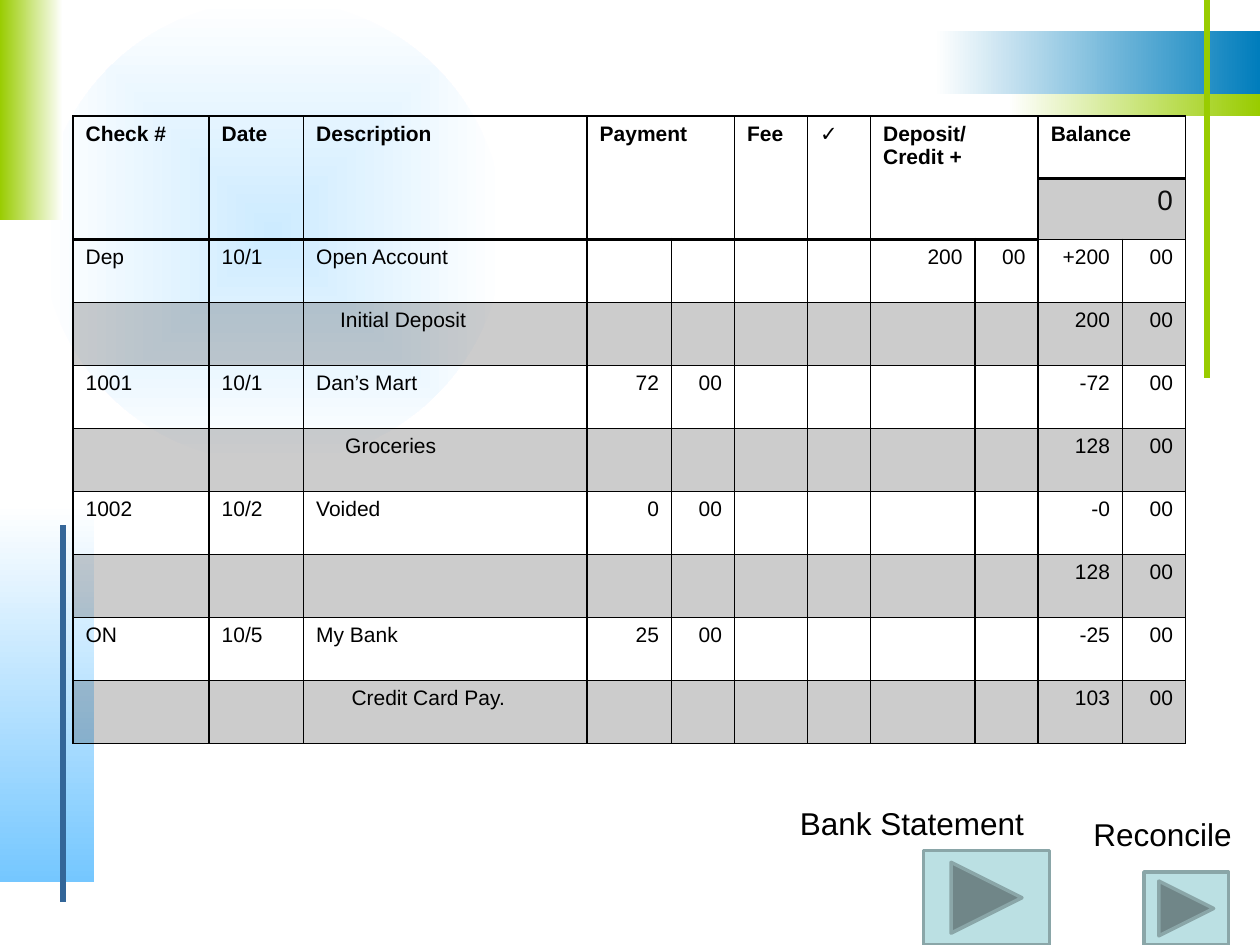
from typing import NamedTuple

from lxml.etree import SubElement
from pptx import Presentation
from pptx.dml.color import RGBColor
from pptx.enum.shapes import MSO_CONNECTOR, MSO_SHAPE
from pptx.enum.text import MSO_AUTO_SIZE, PP_ALIGN
from pptx.oxml import parse_xml
from pptx.oxml.ns import nsdecls, qn
from pptx.util import Inches, Pt

BLACK = RGBColor(0x00, 0x00, 0x00)
WHITE = RGBColor(0xFF, 0xFF, 0xFF)
NEAR_BLACK = RGBColor(0x0D, 0x0D, 0x0D)
GREEN = RGBColor(0x99, 0xCC, 0x00)
PALE_BLUE = RGBColor(0xCD, 0xEB, 0xFF)
SKY_BLUE = RGBColor(0x75, 0xC7, 0xFF)
DEEP_BLUE = RGBColor(0x00, 0x7D, 0xBC)
STEEL_BLUE = RGBColor(0x33, 0x66, 0x99)
BUTTON_FILL = RGBColor(0xBB, 0xE0, 0xE3)
BUTTON_LINE = RGBColor(0x8A, 0xA6, 0xA8)
FONT = "Arial"


class Box(NamedTuple):
    left: float
    top: float
    width: float
    height: float


class GradientBand(NamedTuple):
    box: Box
    start: RGBColor
    end: RGBColor
    angle: float = 0  # counter-clockwise


class Rule(NamedTuple):
    x: float
    top: float
    bottom: float
    color: RGBColor


class Button(NamedTuple):
    label: str
    label_box: Box
    box: Box


class Heading(NamedTuple):
    text: str
    column: int
    columns: int = 1
    rows: int = 2


class Entry(NamedTuple):
    """One transaction: a plain row and the shaded row below it."""
    check: str
    date: str
    description: str
    detail: str
    indent: float
    payment: str
    deposit: str
    change: str
    balance: str


BANDS = [
    GradientBand(Box(7.42, 0.25, 2.58, 0.5), WHITE, DEEP_BLUE),
    GradientBand(Box(0, 4, 0.75, 3), WHITE, SKY_BLUE, 270),
    GradientBand(Box(0, 0, 0.5, 1.75), GREEN, WHITE),
    GradientBand(Box(8, 0.75, 2, 0.17), WHITE, GREEN),
]
RULES = [Rule(9.58, 0, 3, GREEN), Rule(0.5, 4.17, 7.16, STEEL_BLUE)]
BUTTONS = [
    Button("Bank Statement", Box(6.25, 6.33, 2.08, 0.4), Box(7.33, 6.75, 1, 0.75)),
    Button("Reconcile", Box(8.58, 6.42, 1.42, 0.4), Box(9.08, 6.92, 0.67, 0.58)),
]
COLUMN_WIDTHS = [1.08, 0.75, 2.25, 0.67, 0.5, 0.58, 0.5, 0.83, 0.5, 0.67, 0.5]
ROW_HEIGHTS = [0.5, 0.48] + [0.5] * 8
PAYMENT, DEPOSIT, BALANCE = 3, 7, 9
HEADINGS = [
    Heading("Check #", 0), Heading("Date", 1), Heading("Description", 2),
    Heading("Payment", PAYMENT, 2), Heading("Fee", 5), Heading("✓", 6),
    Heading("Deposit/\nCredit +", DEPOSIT, 2), Heading("Balance", BALANCE, 2, 1),
]
ENTRIES = [
    Entry("Dep", "10/1", "Open Account", "Initial Deposit", 0.19, "", "200", "+200", "200"),
    Entry("1001", "10/1", "Dan’s Mart", "Groceries", 0.23, "72", "", "-72", "128"),
    Entry("1002", "10/2", "Voided", "", 0, "0", "", "-0", "128"),
    Entry("ON", "10/5", "My Bank", "Credit Card Pay.", 0.28, "25", "", "-25", "103"),
]


def add_shape(slide, kind: MSO_SHAPE, box: Box):
    shape = slide.shapes.add_shape(kind, *map(Inches, box))
    shape.shadow.inherit = False
    return shape


def add_gradient(slide, kind: MSO_SHAPE, band: GradientBand):
    shape = add_shape(slide, kind, band.box)
    shape.line.fill.background()
    shape.fill.gradient()
    shape.fill.gradient_angle = band.angle
    for stop, color in zip(shape.fill.gradient_stops, (band.start, band.end)):
        stop.color.rgb = color
    return shape


def add_glow(slide) -> None:
    band = GradientBand(Box(0.33, 0, 3.67, 3.67), PALE_BLUE, WHITE)
    glow = add_gradient(slide, MSO_SHAPE.OVAL, band)
    linear = glow._element.spPr.find(qn("a:gradFill")).find(qn("a:lin"))
    linear.getparent().replace(linear, parse_xml(
        f'<a:path {nsdecls("a")} path="shape">'
        '<a:fillToRect l="50000" t="50000" r="50000" b="50000"/></a:path>'))


def add_rule(slide, rule: Rule) -> None:
    x = Inches(rule.x)
    line = slide.shapes.add_connector(
        MSO_CONNECTOR.STRAIGHT, x, Inches(rule.top), x, Inches(rule.bottom))
    line.line.color.rgb = rule.color
    line.line.width = Pt(3)
    SubElement(line._element.spPr, qn("a:effectLst"))


def write(frame, text: str, size: float, bold: bool = False,
          align: PP_ALIGN = PP_ALIGN.LEFT, color: RGBColor = BLACK) -> None:
    for index, words in enumerate(text.split("\n")):
        paragraph = frame.add_paragraph() if index else frame.paragraphs[0]
        paragraph.alignment = align
        run = paragraph.add_run()
        run.text = words
        run.font.name = FONT
        run.font.size = Pt(size)
        run.font.bold = bold
        run.font.color.rgb = color


def add_button(slide, button: Button) -> None:
    shape = add_shape(slide, MSO_SHAPE.ACTION_BUTTON_FORWARD_OR_NEXT, button.box)
    shape.fill.solid()
    shape.fill.fore_color.rgb = BUTTON_FILL
    shape.line.color.rgb = BUTTON_LINE
    shape.line.width = Pt(2)
    frame = slide.shapes.add_textbox(*map(Inches, button.label_box)).text_frame
    frame.word_wrap = True
    frame.auto_size = MSO_AUTO_SIZE.SHAPE_TO_FIT_TEXT
    write(frame, button.label, 18)


def format_cell(cell, shaded: bool, heavy_bottom: bool) -> None:
    if shaded:
        cell.fill.solid()
        cell.fill.fore_color.rgb = BLACK
        properties = cell._tc.get_or_add_tcPr()
        color = properties.find(qn("a:solidFill")).find(qn("a:srgbClr"))
        SubElement(color, qn("a:alpha"), val="20000")
    else:
        cell.fill.background()
        properties = cell._tc.get_or_add_tcPr()
    for index, side in enumerate("LRTB"):
        width = Pt(2 if heavy_bottom and side == "B" else 1)
        properties.insert(index, parse_xml(
            f'<a:ln{side} {nsdecls("a")} w="{width}"><a:solidFill>'
            f'<a:srgbClr val="{BLACK}"/></a:solidFill></a:ln{side}>'))


def write_amount(table, row: int, column: int, dollars: str) -> None:
    """Write dollars and cents in two neighbouring cells."""
    if dollars:
        for offset, text in enumerate((dollars, "00")):
            frame = table.cell(row, column + offset).text_frame
            write(frame, text, 12, align=PP_ALIGN.RIGHT)


def add_register(slide) -> None:
    table = slide.shapes.add_table(
        len(ROW_HEIGHTS), len(COLUMN_WIDTHS), Inches(0.58), Inches(0.92),
        Inches(sum(COLUMN_WIDTHS)), Inches(sum(ROW_HEIGHTS))).table
    table.first_row = table.horz_banding = False
    for column, width in zip(table.columns, COLUMN_WIDTHS):
        column.width = Inches(width)
    for row_index, height in enumerate(ROW_HEIGHTS):
        table.rows[row_index].height = Inches(height)
        for column_index in range(len(COLUMN_WIDTHS)):
            in_balance = column_index >= BALANCE
            shaded = row_index % 2 == 1 and (row_index > 1 or in_balance)
            heavy = row_index == 0 or (row_index == 1 and not in_balance)
            format_cell(table.cell(row_index, column_index), shaded, heavy)

    for heading in HEADINGS:
        cell = table.cell(0, heading.column)
        if heading.rows * heading.columns > 1:
            cell.merge(table.cell(heading.rows - 1, heading.column + heading.columns - 1))
        write(cell.text_frame, heading.text, 12, bold=True)
    opening = table.cell(1, BALANCE)
    opening.merge(table.cell(1, BALANCE + 1))
    write(opening.text_frame, "0", 16, align=PP_ALIGN.RIGHT, color=NEAR_BLACK)

    for row, entry in zip(range(2, len(ROW_HEIGHTS), 2), ENTRIES):
        for column, text in enumerate((entry.check, entry.date, entry.description)):
            write(table.cell(row, column).text_frame, text, 12)
        if entry.detail:
            detail = table.cell(row + 1, 2)
            detail.margin_left = Inches(0.1 + entry.indent)
            write(detail.text_frame, entry.detail, 12)
        write_amount(table, row, PAYMENT, entry.payment)
        write_amount(table, row, DEPOSIT, entry.deposit)
        write_amount(table, row, BALANCE, entry.change)
        write_amount(table, row + 1, BALANCE, entry.balance)


def main() -> None:
    presentation = Presentation()
    presentation.slide_width, presentation.slide_height = Inches(10), Inches(7.5)
    slide = presentation.slides.add_slide(presentation.slide_layouts[6])
    add_glow(slide)
    for band in BANDS:
        add_gradient(slide, MSO_SHAPE.RECTANGLE, band)
    for rule in RULES:
        add_rule(slide, rule)
    add_register(slide)
    for button in BUTTONS:
        add_button(slide, button)
    presentation.save("out.pptx")


if __name__ == "__main__":
    main()
